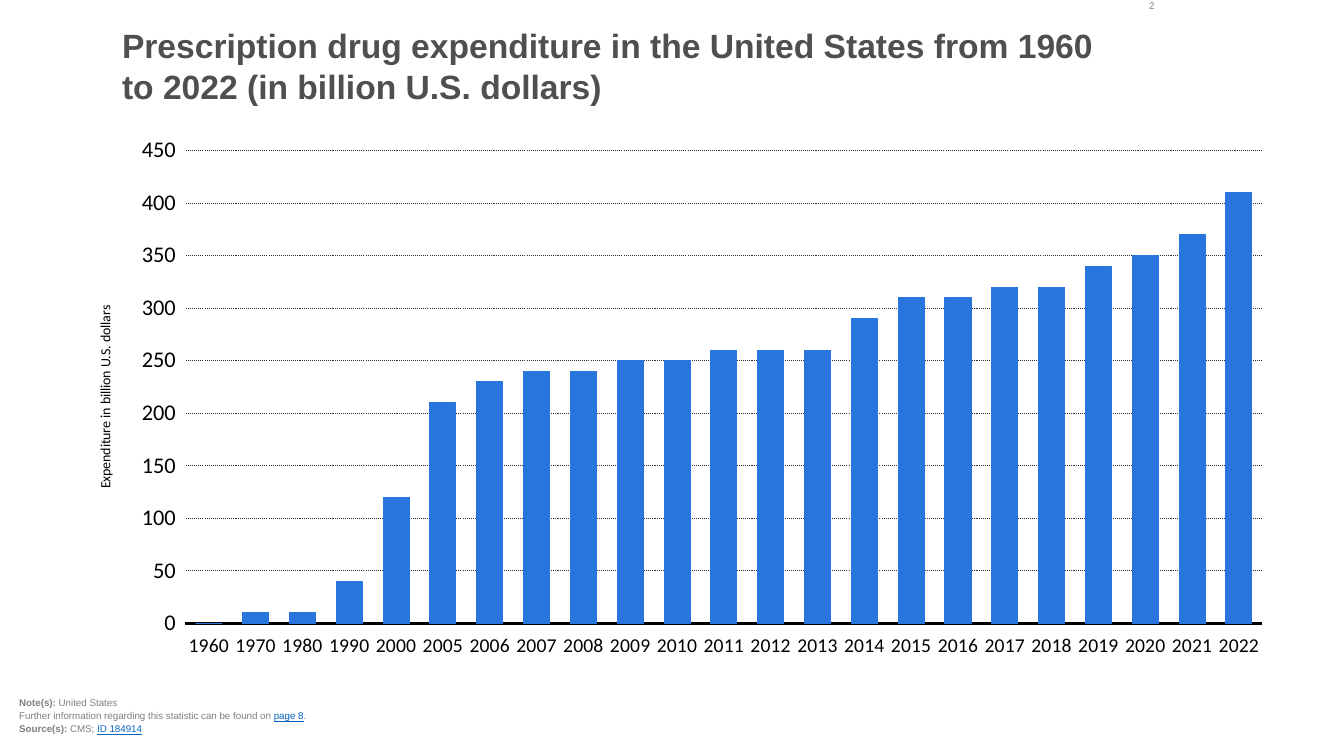
from pptx import Presentation
from pptx.chart.data import CategoryChartData
from pptx.dml.color import RGBColor
from pptx.enum.chart import XL_CHART_TYPE, XL_TICK_LABEL_POSITION, XL_TICK_MARK
from pptx.enum.dml import MSO_LINE
from pptx.enum.text import MSO_ANCHOR, PP_ALIGN
from pptx.util import Inches, Pt

COLUMN = XL_CHART_TYPE.COLUMN_CLUSTERED
LOW = XL_TICK_LABEL_POSITION.LOW
NO_TICK = XL_TICK_MARK.NONE
DOT = MSO_LINE.ROUND_DOT
TOP, BOTTOM = MSO_ANCHOR.TOP, MSO_ANCHOR.BOTTOM
LEFT, RIGHT = PP_ALIGN.LEFT, PP_ALIGN.RIGHT

DARK = RGBColor(0x4F, 0x4F, 0x4F)
GRAY = RGBColor(0x80, 0x80, 0x80)
LINK = RGBColor(0x05, 0x63, 0xC1)
BLUE = RGBColor(0x28, 0x76, 0xDD)
GRID = RGBColor(0x2F, 0x2F, 0x2F)
BLACK = RGBColor(0, 0, 0)

# Content: paragraphs are lists of (text, style) runs
TITLE = [[("Prescription drug expenditure in the United States "
           "from 1960 to 2022 (in billion U.S. dollars)", "bold")]]
NOTES = [
    [("Note(s):", "bold"), (" United States", "")],
    [("Further information regarding this statistic can be found on ", ""),
     ("page 8", "link"), (".", "")],
    [("Source(s): ", "bold"), ("CMS; ", ""), ("ID 184914", "link")],
]
PAGE = [[("2", "")]]
AXIS = "Expenditure in billion U.S. dollars"
YEARS = [1960, 1970, 1980, 1990, 2000, *range(2005, 2023)]
SPEND = [0, 10, 10, 40, 120, 210, 230, 240, 240, 250, 250, 260,
         260, 260, 290, 310, 310, 320, 320, 340, 350, 370, 410]

# Places as percent of the slide: left, top, width, height
TITLE_BOX = (9.08, 3.33, 74.04, 16)
NOTES_BOX = (1.43, 89.47, 66.17, 7.73)
CHART_BOX = (5.63, 16.67, 90.1, 71.73)
PAGE_BOX = (82.3, 0, 3.6, 2.93)

deck = Presentation()
deck.slide_width, deck.slide_height = Inches(13.33), Inches(7.5)
slide = deck.slides.add_slide(deck.slide_layouts[6])


def place(box):
    sides = (deck.slide_width, deck.slide_height) * 2
    return [int(side * part / 100) for side, part in zip(sides, box)]


def set_font(font, size, color=BLACK, name="Calibri", bold=False):
    font.name, font.size, font.bold = name, Pt(size), bold
    font.color.rgb = color


def add_text(lines, box, size=7, color=GRAY, align=LEFT, anchor=TOP, gap=1):
    frame = slide.shapes.add_textbox(*place(box)).text_frame
    frame.word_wrap = True
    frame.vertical_anchor = anchor
    frame.margin_left = frame.margin_right = 0
    frame.margin_top = frame.margin_bottom = 0
    for i, line in enumerate(lines):
        para = frame.add_paragraph() if i else frame.paragraphs[0]
        para.alignment, para.space_after = align, Pt(gap)
        for text, style in line:
            run = para.add_run()
            run.text = text
            link = style == "link"
            set_font(run.font, size, LINK if link else color, "Arial", style == "bold")
            run.font.underline = link


# Title and notes
add_text(TITLE, TITLE_BOX, size=24, color=DARK)
add_text(NOTES, NOTES_BOX, anchor=BOTTOM)

# Column chart
data = CategoryChartData()
data.categories = [str(year) for year in YEARS]
data.add_series("Series 1", SPEND)
chart = slide.shapes.add_chart(COLUMN, *place(CHART_BOX), data).chart
chart.has_legend = chart.has_title = False
set_font(chart.font, 18)

plot = chart.plots[0]
plot.gap_width, plot.overlap = 80, -30
plot.vary_by_categories = False
bars = plot.series[0].format
bars.fill.solid()
bars.fill.fore_color.rgb = bars.line.color.rgb = BLUE
bars.line.width = Pt(0.75)

# Axes
years, spend = chart.category_axis, chart.value_axis
for axis, size in ((years, 14), (spend, 16)):
    axis.major_tick_mark = axis.minor_tick_mark = NO_TICK
    axis.tick_label_position = LOW
    set_font(axis.tick_labels.font, size)
years.format.line.color.rgb = BLACK
years.format.line.width = Pt(2)

spend.minimum_scale, spend.maximum_scale, spend.major_unit = 0, 450, 50
spend.tick_labels.number_format = "#,##0"
spend.tick_labels.number_format_is_linked = False
spend.format.line.fill.background()
rule = spend.major_gridlines.format.line
rule.color.rgb, rule.width, rule.dash_style = GRID, Pt(0.75), DOT

label = spend.axis_title.text_frame
label.text = AXIS
set_font(label.paragraphs[0].runs[0].font, 10)
label._txBody.bodyPr.set("rot", "-5400000")

# Page number
add_text(PAGE, PAGE_BOX, align=RIGHT)

deck.save("out.pptx")
